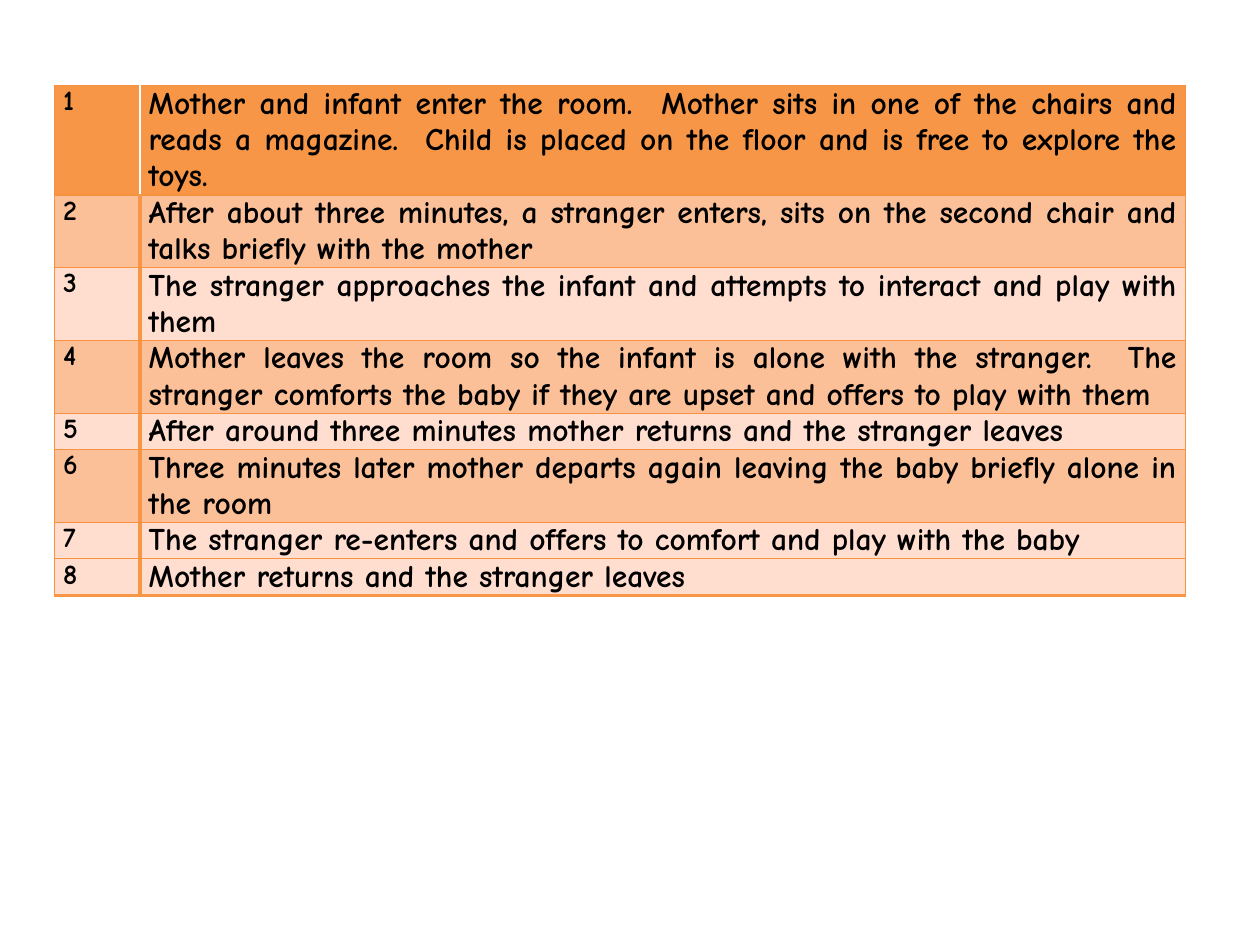
"""Build a slide with a table of the eight stages of the strange situation."""
from dataclasses import dataclass

from lxml import etree
from pptx import Presentation
from pptx.dml.color import RGBColor
from pptx.enum.text import MSO_ANCHOR, PP_ALIGN
from pptx.oxml.ns import qn
from pptx.table import _Cell
from pptx.util import Pt

JUSTIFY = PP_ALIGN.JUSTIFY
TOP = MSO_ANCHOR.TOP
FONT = "Comic Neue"
COLORS = {
    "text": "000000",
    "header": "F79646",
    "band": "FCC099",
    "plain": "FFDDCF",
    "grid": "F69240",
    "divider": "F79646",
}
THIN, THICK = 0.75, 2
LINE_HEIGHT = 20.8
COLUMN_WIDTHS = (49, 597.5)
TABLE_LEFT, TABLE_TOP = 31, 49


@dataclass(frozen=True)
class Stage:
    """One stage of the procedure."""

    description: str
    fill: str
    lines: int


@dataclass(frozen=True)
class Border:
    """One edge of a cell."""

    side: str
    color: str
    width: float


STAGES = (
    Stage("Mother and infant enter the room.  Mother sits in one of the chairs and reads "
          "a magazine.  Child is placed on the floor and is free to explore the toys.", "header", 3),
    Stage("After about three minutes, a stranger enters, sits on the second chair and "
          "talks briefly with the mother", "band", 2),
    Stage("The stranger approaches the infant and attempts to interact and play with them", "plain", 2),
    Stage("Mother leaves the room so the infant is alone with the stranger.  The stranger "
          "comforts the baby if they are upset and offers to play with them", "band", 2),
    Stage("After around three minutes mother returns and the stranger leaves", "plain", 1),
    Stage("Three minutes later mother departs again leaving the baby briefly alone in the room", "band", 2),
    Stage("The stranger re-enters and offers to comfort and play with the baby", "plain", 1),
    Stage("Mother returns and the stranger leaves", "plain", 1),
)


def fill_cell(cell: _Cell, text: str, size: float, fill: str) -> None:
    """Write and format the content of a cell."""
    cell.margin_left = cell.margin_right = Pt(5)
    cell.margin_top = cell.margin_bottom = 0
    cell.vertical_anchor = TOP
    cell.fill.solid()
    cell.fill.fore_color.rgb = RGBColor.from_string(COLORS[fill])
    cell.text = text
    paragraph = cell.text_frame.paragraphs[0]
    paragraph.alignment = JUSTIFY
    paragraph.font.name = FONT
    paragraph.font.size = Pt(size)
    paragraph.font.bold = True
    paragraph.font.color.rgb = RGBColor.from_string(COLORS["text"])


def add_borders(cell: _Cell, borders: list[Border]) -> None:
    """Put border lines ahead of the fill of a cell."""
    properties = cell._tc.get_or_add_tcPr()
    for position, border in enumerate(borders):
        line = etree.Element(qn(f"a:ln{border.side}"), w=str(Pt(border.width)))
        solid = etree.SubElement(line, qn("a:solidFill"))
        etree.SubElement(solid, qn("a:srgbClr"), val=COLORS[border.color])
        properties.insert(position, line)


def cell_borders(row: int, column: int) -> list[Border]:
    """Choose the edges of a cell; the header has no divider."""
    outer, inner = ("L", "R") if column == 0 else ("R", "L")
    edges = {outer: Border(outer, "grid", THIN)}
    if row > 0:
        edges[inner] = Border(inner, "divider", THICK)
    edges["T"] = Border("T", "grid", THIN)
    is_last = row == len(STAGES) - 1
    edges["B"] = Border("B", "divider", THICK) if is_last else Border("B", "grid", THIN)
    return [edges[side] for side in "LRTB" if side in edges]


def main() -> None:
    """Create and save the slide."""
    presentation = Presentation()
    presentation.slide_width, presentation.slide_height = Pt(720), Pt(540)
    slide = presentation.slides.add_slide(presentation.slide_layouts[6])
    total_lines = sum(stage.lines for stage in STAGES)
    stage_table = slide.shapes.add_table(
        len(STAGES), len(COLUMN_WIDTHS), Pt(TABLE_LEFT), Pt(TABLE_TOP),
        Pt(sum(COLUMN_WIDTHS)), Pt(total_lines * LINE_HEIGHT)).table
    for column, width in zip(stage_table.columns, COLUMN_WIDTHS):
        column.width = Pt(width)
    for row, stage in enumerate(STAGES):
        stage_table.rows[row].height = Pt(stage.lines * LINE_HEIGHT)
        for column, (text, size) in enumerate(((str(row + 1), 16), (stage.description, 18))):
            cell = stage_table.cell(row, column)
            fill_cell(cell, text, size, stage.fill)
            add_borders(cell, cell_borders(row, column))
    presentation.save("out.pptx")


if __name__ == "__main__":
    main()
